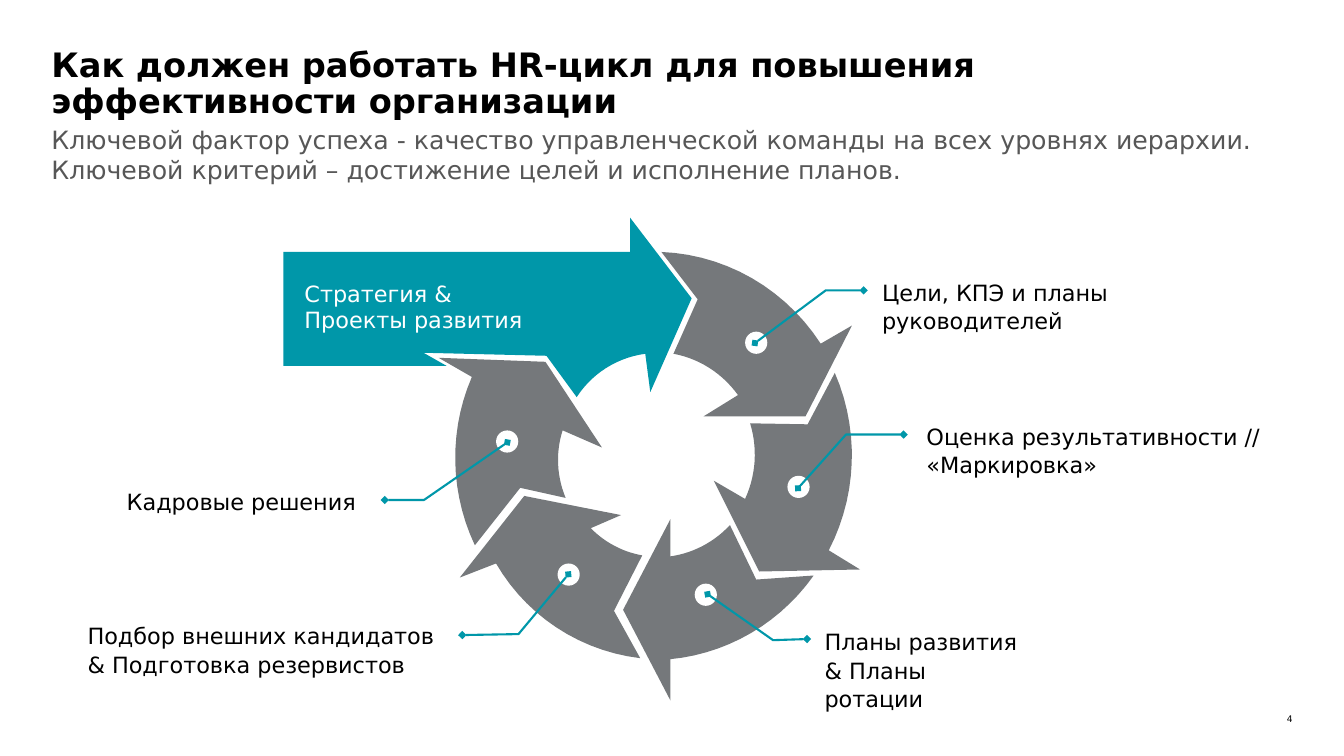
from math import atan2, cos, hypot, pi, sin

from lxml.etree import SubElement
from pptx import Presentation
from pptx.dml.color import RGBColor
from pptx.enum.shapes import MSO_SHAPE
from pptx.enum.text import MSO_ANCHOR, PP_ALIGN
from pptx.oxml.ns import qn
from pptx.util import Inches, Pt

BLACK = RGBColor(0x00, 0x00, 0x00)
WHITE = RGBColor(0xFF, 0xFF, 0xFF)
SUBTITLE_GRAY = RGBColor(0x57, 0x57, 0x57)
RING_GRAY = RGBColor(0x75, 0x78, 0x7B)
TEAL = RGBColor(0x00, 0x97, 0xA9)
FONT = "DejaVu Sans"

TITLE = "Как должен работать HR-цикл для повышения эффективности организации"
SUBTITLE = ("Ключевой фактор успеха - качество управленческой команды на всех уровнях иерархии. "
            "Ключевой критерий – достижение целей и исполнение планов.")
STRATEGY = "Стратегия & Проекты развития"

CENTER_X, CENTER_Y = 6.47, 4.52
RADIUS_X, RADIUS_Y = 1.98, 2.02
ARC = 14
DOT = 0.22

# A third value in a point means: reach it along the ring in that many steps.
SEGMENTS = [
    (RING_GRAY, [(7.53, 5.67), (8.53, 5.65), (8.22, 5.46), (8.28, 3.7, ARC), (8.01, 4.21),
                 (7.44, 4.2), (7.39, 4.95, ARC), (7.08, 4.77)]),
    (RING_GRAY, [(6.98, 4.13), (7.99, 4.13), (8.45, 3.23), (8.14, 3.41), (6.56, 2.5, ARC),
                 (6.92, 2.97), (6.68, 3.51), (7.32, 3.92, ARC)]),
    (TEAL, [(2.81, 3.63), (4.43, 3.63), (4.2, 3.5), (5.42, 3.53), (5.72, 3.94),
            (6.4, 3.51, ARC), (6.45, 3.89), (6.86, 2.96), (6.25, 2.16), (6.25, 2.5),
            (2.81, 2.5)]),
    (RING_GRAY, [(6.18, 6.05), (6.65, 6.95), (6.65, 6.54), (8.07, 5.71, ARC), (7.5, 5.75),
                 (7.24, 5.21), (6.65, 5.52, ARC), (6.65, 5.15)]),
    (RING_GRAY, [(5.41, 3.59), (4.35, 3.55), (4.68, 3.74), (4.71, 5.41, ARC), (5.16, 4.84),
                 (5.61, 4.94), (5.58, 4.27, ARC), (5.97, 4.44)]),
    (RING_GRAY, [(5.2, 4.92), (4.56, 5.73), (4.92, 5.59), (6.35, 6.53, ARC), (6.09, 6.06),
                 (6.37, 5.51), (5.86, 5.24, ARC), (6.16, 5.11)]),
]

DOTS = [(7.39, 3.29), (7.81, 4.72), (6.89, 5.79), (5.53, 5.59), (4.92, 4.27)]

CALLOUTS = [
    ("Цели, КПЭ и планы руководителей", 8.65, 2.65, 2.49, False, 0.345, (1.125, -0.467)),
    ("Кадровые решения", 1.16, 4.73, 2.57, True, 0.345, (-0.509, -0.507)),
    ("Планы развития & Планы ротации", 8.08, 6.12, 2.23, False, 0.329, (-0.336, -0.476)),
    ("Оценка результативности // «Маркировка»", 9.09, 4.08, 3.78, False, 0.345,
     (1.141, -0.311)),
    ("Подбор внешних кандидатов & Подготовка резервистов", 0.77, 6.06, 3.69, True, 0.36,
     (-0.54, -0.319)),
]


def write(sp, text, size, color, margins=(0, 0, 0, 0), anchor=MSO_ANCHOR.TOP,
          spacing=None, bold=False, align=PP_ALIGN.LEFT):
    tf = sp.text_frame
    tf.word_wrap = True
    tf.vertical_anchor = anchor
    tf.margin_left, tf.margin_top, tf.margin_right, tf.margin_bottom = map(Inches, margins)
    tf.text = text
    p = tf.paragraphs[0]
    p.alignment = align
    if spacing:
        p.line_spacing = spacing
    font = p.runs[0].font
    font.name, font.size, font.bold = FONT, Pt(size), bold
    font.color.rgb = color


def add_text(box, *args, **kwargs):
    write(slide.shapes.add_textbox(*map(Inches, box)), *args, **kwargs)


def paint(sp, color):
    sp.shadow.inherit = False
    sp.fill.solid()
    sp.fill.fore_color.rgb = color
    sp.line.fill.background()


def polar(x, y):
    u, v = (x - CENTER_X) / RADIUS_X, (y - CENTER_Y) / RADIUS_Y
    return atan2(v, u), hypot(u, v)


def trace(points):
    outline = [points[0]]
    for x, y, *steps in points[1:]:
        if steps:
            a, ra = polar(*outline[-1])
            b, rb = polar(x, y)
            sweep = (b - a + pi) % (2 * pi) - pi
            for i in range(1, steps[0]):
                t = i / steps[0]
                angle, radius = a + sweep * t, ra + (rb - ra) * t
                outline.append((CENTER_X + RADIUS_X * radius * cos(angle),
                                CENTER_Y + RADIUS_Y * radius * sin(angle)))
        outline.append((x, y))
    return [(Inches(x), Inches(y)) for x, y in outline]


def add_segment(color, points):
    start, *rest = trace(points)
    builder = slide.shapes.build_freeform(*start)
    builder.add_line_segments(rest, close=True)
    paint(builder.convert_to_shape(), color)


def add_callout(text, x, y, width, flipped, line_start, line_end):
    sp = slide.shapes.add_shape(MSO_SHAPE.LINE_CALLOUT_2_NO_BORDER,
                                Inches(x), Inches(y), Inches(width), Inches(0.67))
    for i, value in enumerate((line_start, -0.034, 0.345, -0.185, *line_end)):
        sp.adjustments[i] = value
    paint(sp, WHITE)
    sp.line.color.rgb = TEAL
    sp.line.width = Pt(1.5)
    ln = sp.element.spPr.find(qn("a:ln"))
    for end in ("a:headEnd", "a:tailEnd"):
        SubElement(ln, qn(end), type="diamond")
    if flipped:
        sp.element.spPr.find(qn("a:xfrm")).set("flipH", "1")
    write(sp, text, 16, BLACK, margins=(0.1, 0.1, 0.1, 0.1), spacing=1.06)


prs = Presentation()
prs.slide_width, prs.slide_height = Inches(13.33), Inches(7.5)
slide = prs.slides.add_slide(prs.slide_layouts[6])

add_text((12.48, 7.08, 0.34, 0.11), "4", 6.5, BLACK, align=PP_ALIGN.RIGHT)
add_text((0.51, 0.43, 12.31, 0.64), TITLE, 24, BLACK,
         margins=(0, 0.05, 0.1, 0.05), spacing=0.9, bold=True)
add_text((0.51, 1.23, 12.31, 0.41), SUBTITLE, 18, SUBTITLE_GRAY)

for color, points in SEGMENTS:
    add_segment(color, points)
add_text((3.02, 2.8, 2.3, 0.51), STRATEGY, 16, WHITE,
         anchor=MSO_ANCHOR.MIDDLE, spacing=0.95)

for x, y in DOTS:
    paint(slide.shapes.add_shape(MSO_SHAPE.OVAL, Inches(x), Inches(y),
                                 Inches(DOT), Inches(DOT)), WHITE)
for callout in CALLOUTS:
    add_callout(*callout)

prs.save("out.pptx")
